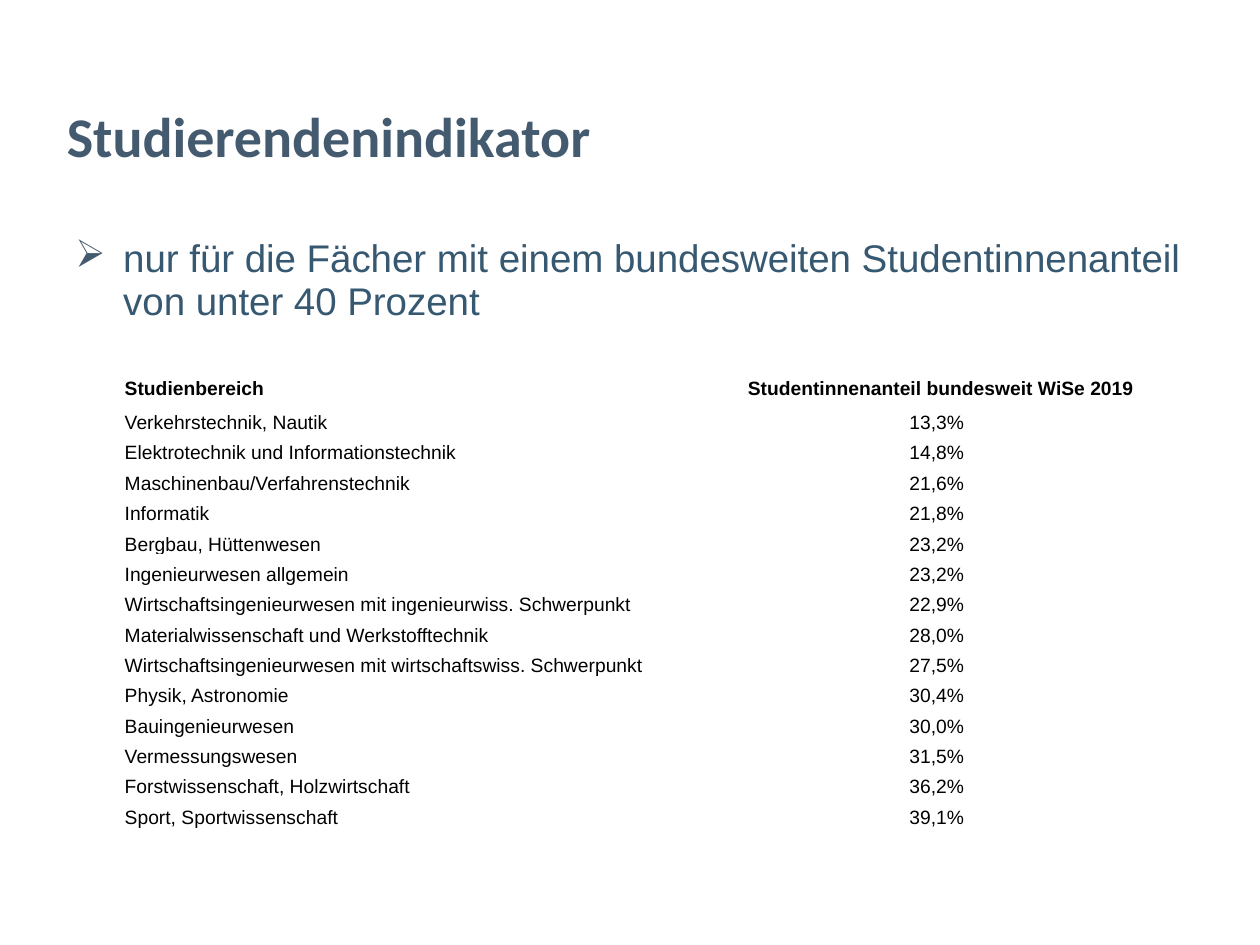
from lxml import etree
from pptx import Presentation
from pptx import util as u
from pptx.dml.color import RGBColor
from pptx.enum import text
from pptx.oxml.ns import qn

SLATE = RGBColor(0x44, 0x5A, 0x6F)
BLUE = RGBColor(0x36, 0x58, 0x71)
BLACK = RGBColor(0, 0, 0)

UNIT = u.Inches(0.1)  # the slide is a grid of 100 columns and 75 rows
COLUMNS, ROWS = 100, 75

LEFT, CENTER, RIGHT = text.PP_ALIGN.LEFT, text.PP_ALIGN.CENTER, text.PP_ALIGN.RIGHT
TOP, MIDDLE, BOTTOM = text.MSO_ANCHOR.TOP, text.MSO_ANCHOR.MIDDLE, text.MSO_ANCHOR.BOTTOM

HEADER = ("Studienbereich", "Studentinnenanteil bundesweit WiSe 2019")
SHARES = [
    ("Verkehrstechnik, Nautik", "13,3%"),
    ("Elektrotechnik und Informationstechnik", "14,8%"),
    ("Maschinenbau/Verfahrenstechnik", "21,6%"),
    ("Informatik", "21,8%"),
    ("Bergbau, Hüttenwesen", "23,2%"),
    ("Ingenieurwesen allgemein", "23,2%"),
    ("Wirtschaftsingenieurwesen mit ingenieurwiss. Schwerpunkt", "22,9%"),
    ("Materialwissenschaft und Werkstofftechnik", "28,0%"),
    ("Wirtschaftsingenieurwesen mit wirtschaftswiss. Schwerpunkt", "27,5%"),
    ("Physik, Astronomie", "30,4%"),
    ("Bauingenieurwesen", "30,0%"),
    ("Vermessungswesen", "31,5%"),
    ("Forstwissenschaft, Holzwirtschaft", "36,2%"),
    ("Sport, Sportwissenschaft", "39,1%"),
]


def grid(*cells):
    return [int(n * UNIT) for n in cells]


def write(tf, words, size=11, font="Arial", color=BLACK, bold=False, align=LEFT):
    p = tf.paragraphs[0]
    p.alignment = align
    r = p.add_run()
    r.text = words
    r.font.size, r.font.name, r.font.bold = u.Pt(size), font, bold
    r.font.color.rgb = color
    return p


def set_margins(box, left, top, right, bottom):
    box.margin_left, box.margin_top, box.margin_right, box.margin_bottom = grid(
        left, top, right, bottom)


def add_bullet(p, char, color, indent):
    pPr = p._p.get_or_add_pPr()
    pPr.set("marL", str(indent))
    pPr.set("indent", str(-indent))
    clr = etree.SubElement(pPr, qn("a:buClr"))
    etree.SubElement(clr, qn("a:srgbClr")).set("val", str(color))
    etree.SubElement(pPr, qn("a:buChar")).set("char", char)


class Deck:
    """Holds the presentation, its style and the current slide."""

    def __init__(self):
        self.prs = Presentation()
        self.prs.slide_width, self.prs.slide_height = grid(COLUMNS, ROWS)
        self.s = self.prs.slides.add_slide(self.prs.slide_layouts[5])

    def title(self, words, *place):
        sp = self.s.shapes.title
        sp.left, sp.top, sp.width, sp.height = grid(*place)
        tf = sp.text_frame
        tf.vertical_anchor = MIDDLE
        tf.auto_size = text.MSO_AUTO_SIZE.NONE
        set_margins(tf, 1, 0.5, 1, 0.5)
        write(tf, words, size=32, font="Calibri", color=SLATE, bold=True)

    def bullet(self, words, *place):
        tf = self.s.shapes.add_textbox(*grid(*place)).text_frame
        tf.word_wrap = True
        tf.vertical_anchor = TOP
        set_margins(tf, 1, 0.8, 1, 0.5)
        p = write(tf, words, size=22, color=BLUE)
        p.line_spacing, p.space_after = 0.93, u.Pt(14.2)
        add_bullet(p, "➢", SLATE, u.Inches(0.38))

    def table(self, header, rows, left, top, widths, height):
        rows = [header, *rows]
        frame = self.s.shapes.add_table(
            len(rows), len(widths), *grid(left, top, sum(widths), height))
        table = frame.table
        table.first_row = table.horz_banding = False
        for column, width in zip(table.columns, grid(*widths)):
            column.width = width
        for i, row in enumerate(rows):
            is_header = i == 0
            aligns = (LEFT, RIGHT if is_header else CENTER)
            for j, (words, align) in enumerate(zip(row, aligns)):
                cell = table.cell(i, j)
                cell.fill.background()
                cell.vertical_anchor = MIDDLE if is_header else BOTTOM
                set_margins(cell, 0.1, 0.1, 0.1, 0)
                write(cell.text_frame, words, bold=is_header, align=align)


def main():
    deck = Deck()
    deck.title("Studierendenindikator", 4.3, 6.8, 90, 7.8)
    deck.bullet("nur für die Fächer mit einem bundesweiten Studentinnenanteil "
                "von unter 40 Prozent", 5, 18.1, 95, 54)
    deck.table(HEADER, SHARES, 9.8, 29.6, (48.8, 31.5), 36.2)
    deck.prs.save("out.pptx")


if __name__ == "__main__":
    main()
